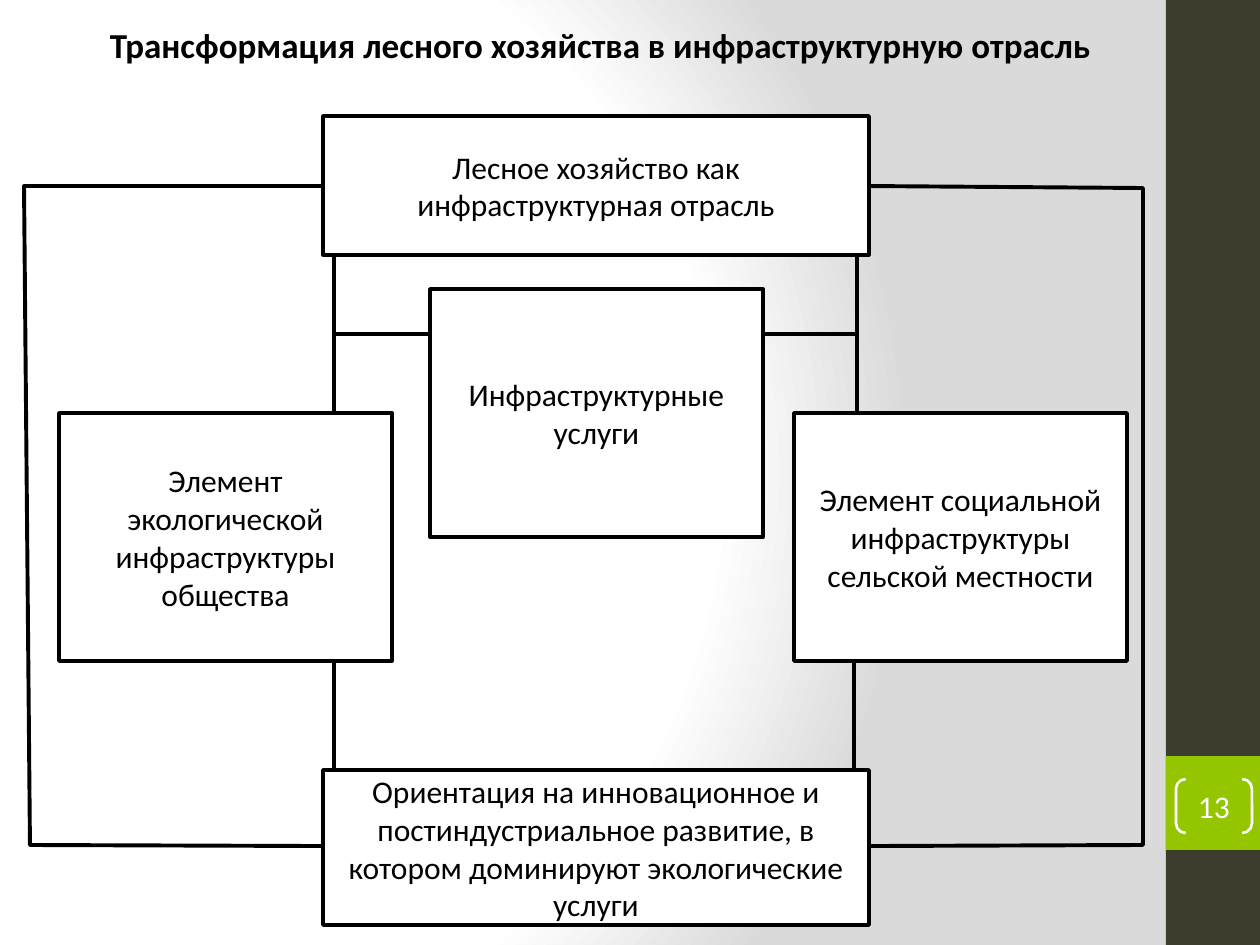
import lxml.etree
import pptx
import pptx.dml.color
import pptx.enum.shapes
import pptx.enum.text
import pptx.oxml
import pptx.oxml.ns
import pptx.util

PX = pptx.util.Inches(1) / 126
BLACK = pptx.dml.color.RGBColor(0x00, 0x00, 0x00)
WHITE = pptx.dml.color.RGBColor(0xFF, 0xFF, 0xFF)
OLIVE = pptx.dml.color.RGBColor(0x3E, 0x3D, 0x2D)
GREEN = pptx.dml.color.RGBColor(0x94, 0xC6, 0x00)
SHAPES = pptx.enum.shapes.MSO_SHAPE
MIDDLE = pptx.enum.text.MSO_ANCHOR.MIDDLE

BACKGROUND = f"""<p:bg {pptx.oxml.ns.nsdecls("p", "a")}><p:bgPr>
<a:gradFill rotWithShape="1"><a:gsLst>
<a:gs pos="0"><a:srgbClr val="FFFFFF"/></a:gs>
<a:gs pos="75000"><a:srgbClr val="FFFFFF"/></a:gs>
<a:gs pos="100000"><a:srgbClr val="DADADA"/></a:gs></a:gsLst>
<a:path path="circle"><a:fillToRect l="20000" t="50000" r="100000" b="50000"/></a:path>
</a:gradFill><a:effectLst/></p:bgPr></p:bg>"""

BOX_WIDE, BOX_NARROW = 546, 333
BOX_HEIGHT = 248


def emu(*lengths):
    return [round(length * PX) for length in lengths]


def write_text(shape, text, size=18, color=BLACK, bold=False):
    frame = shape.text_frame
    frame.word_wrap = True
    frame.vertical_anchor = MIDDLE
    paragraph = frame.paragraphs[0]
    paragraph.alignment = pptx.enum.text.PP_ALIGN.CENTER
    run = paragraph.add_run()
    run.text = text
    run.font.color.rgb = color
    font_format = {"name": "Calibri", "size": pptx.util.Pt(size), "bold": bold}
    for name, value in font_format.items():
        setattr(run.font, name, value)


def set_line(shape, color=BLACK, width=2.25):
    shape.line.color.rgb = color
    shape.line.width = pptx.util.Pt(width)


def add_block(slide, box, fill=None, kind=SHAPES.RECTANGLE):
    """Add a preset shape without an outline; no fill colour leaves it clear."""
    shape = slide.shapes.add_shape(kind, *emu(*box))
    shape.shadow.inherit = False
    shape.line.fill.background()
    if fill is None:
        shape.fill.background()
    else:
        shape.fill.solid()
        shape.fill.fore_color.rgb = fill
    return shape


def add_straight_line(slide, start, end):
    line = slide.shapes.add_connector(
        pptx.enum.shapes.MSO_CONNECTOR.STRAIGHT, *emu(*start, *end))
    set_line(line)
    lxml.etree.SubElement(line._element.spPr, pptx.oxml.ns.qn("a:effectLst"))


def add_bracket_line(slide, points):
    """Join the top box to the bottom box around one side."""
    start, *others = [emu(*point) for point in points]
    builder = slide.shapes.build_freeform(*start, scale=1.0)
    builder.add_line_segments(others, close=False)
    shape = builder.convert_to_shape()
    shape.shadow.inherit = False
    shape.fill.background()
    set_line(shape)


def add_title(slide, box):
    title = slide.shapes.title
    for name, value in zip(("left", "top", "width", "height"), emu(*box)):
        setattr(title, name, value)
    title.text_frame.auto_size = pptx.enum.text.MSO_AUTO_SIZE.NONE
    write_text(title, "Трансформация лесного хозяйства в инфраструктурную отрасль",
               size=20, bold=True)


def add_sidebar(slide, box, number):
    left, top, width, height = box
    add_block(slide, box, OLIVE)
    tab_top = top + height * 4 // 5
    add_block(slide, (left, tab_top, width, width), GREEN)
    bracket = add_block(slide, (left + 10, tab_top + 23, 76, 54),
                        kind=SHAPES.DOUBLE_BRACKET)
    bracket.adjustments[0] = 0.18
    set_line(bracket, WHITE, 1.5)
    for side in ("left", "top", "right", "bottom"):
        setattr(bracket.text_frame, f"margin_{side}", 0)
    write_text(bracket, number, color=WHITE)


def add_diagram(slide, box):
    left, top, width, height = box
    right, bottom = left + width, top + height
    top_box = (left + 299, top, BOX_WIDE, 139)
    service_box = (left + 406, top + 173, BOX_NARROW, BOX_HEIGHT)
    bottom_box = (left + 299, bottom - 155, BOX_WIDE, 155)
    left_box = (left + 35, top + 297, BOX_NARROW, BOX_HEIGHT)
    right_box = (left + 770, top + 297, BOX_NARROW, BOX_HEIGHT)
    texts = (
        (top_box, "Лесное хозяйство как инфраструктурная отрасль"),
        (service_box, "Инфраструктурные услуги"),
        (bottom_box, "Ориентация на инновационное и постиндустриальное развитие, "
                     "в котором доминируют экологические услуги"),
        (left_box, "Элемент экологической инфраструктуры общества"),
        (right_box, "Элемент социальной инфраструктуры сельской местности"),
    )
    for place, text in texts:
        shape = add_block(slide, place, WHITE)
        set_line(shape, width=2)
        write_text(shape, text)

    wide_left, wide_right = top_box[0], top_box[0] + BOX_WIDE
    upper, lower = top + 70, bottom - 79
    add_bracket_line(slide, [(wide_left, upper), (left, upper),
                             (left + 6, lower - 1), (wide_left, lower)])
    add_bracket_line(slide, [(wide_right, upper), (right, upper + 2),
                             (right, lower - 1), (wide_right, lower)])

    top_edge, bottom_edge = top + top_box[3], bottom_box[1]
    side_top, side_bottom = left_box[1], left_box[1] + BOX_HEIGHT
    stem_left, stem_right = left + 310, left + 833
    for x in (stem_left, stem_right):
        add_straight_line(slide, (x, top_edge), (x, side_top))
    for x in (stem_left, stem_right - 3):
        add_straight_line(slide, (x, side_bottom), (x, bottom_edge))
    branch = top + 218
    service_right = service_box[0] + BOX_NARROW
    for start, end in ((stem_left, service_box[0]), (service_right, stem_right)):
        add_straight_line(slide, (start, branch), (end, branch))


def main():
    presentation = pptx.Presentation()
    presentation.slide_width, presentation.slide_height = emu(1260, 945)
    slide = presentation.slides.add_slide(presentation.slide_layouts[5])
    slide._element.cSld.insert(0, pptx.oxml.parse_xml(BACKGROUND))
    add_sidebar(slide, (1166, 0, 94, 945), "13")
    add_diagram(slide, (24, 116, 1119, 809))
    add_title(slide, (24, 17, 1153, 55))
    presentation.save("out.pptx")


if __name__ == "__main__":
    main()
